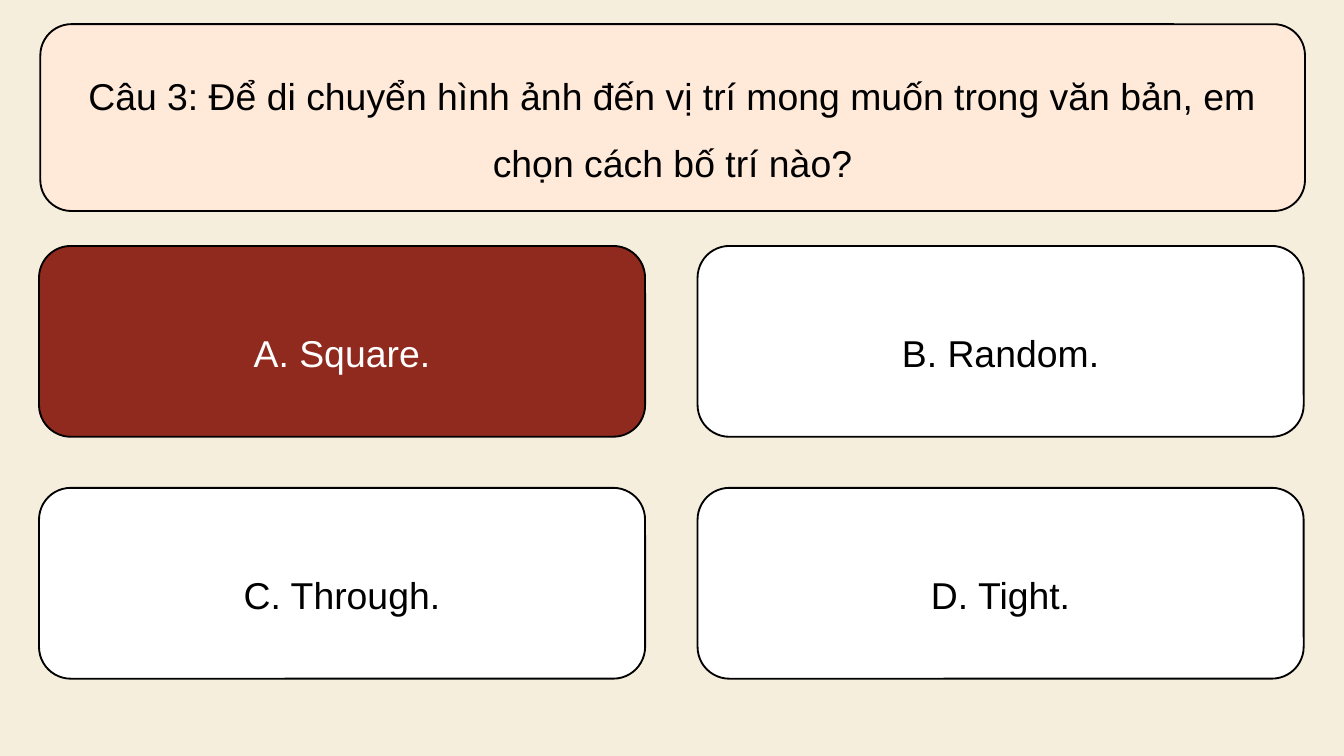
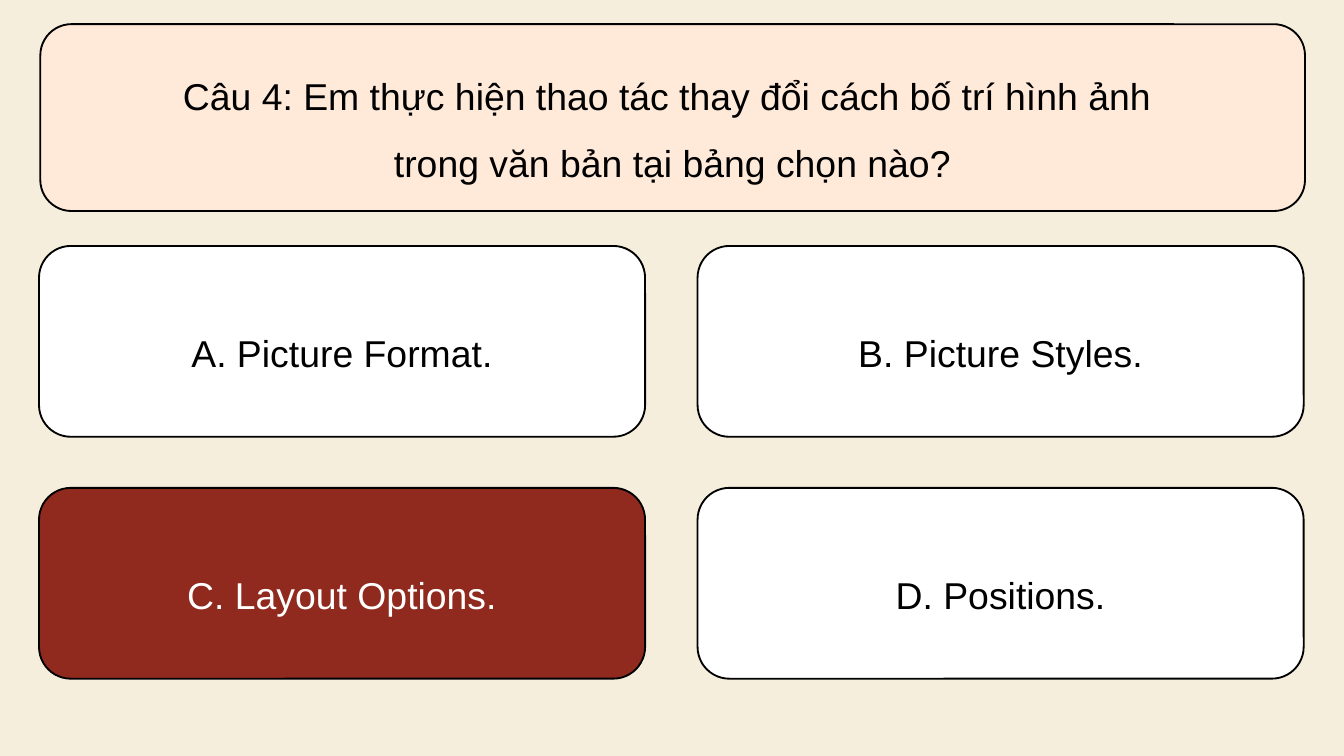
from dataclasses import dataclass

from pptx import Presentation
from pptx.dml.color import RGBColor
from pptx.enum.shapes import MSO_SHAPE
from pptx.enum.text import MSO_ANCHOR, PP_ALIGN
from pptx.presentation import Presentation as Deck
from pptx.slide import Slide
from pptx.util import Inches, Pt

COLORS = {
    "background": "F5EEDC",
    "question": "FFEADA",
    "option": "FFFFFF",
    "correct": "90291E",
    "dark": "000000",
    "light": "FFFFFF",
}
FONT = "Arial"

# Answer grid, in inches
GRID_LEFT, GRID_TOP = 0.29, 1.83
CARD_W, CARD_H = 4.51, 1.42
STEP_X, STEP_Y = 4.9, 1.8


@dataclass(frozen=True)
class Card:
    text: str
    left: float
    top: float
    width: float
    height: float
    fill: str
    color: str = "dark"


@dataclass(frozen=True)
class Quiz:
    question: str
    answers: tuple[str, ...]
    correct: int


QUIZZES = [
    Quiz(
        "Câu 3: Để di chuyển hình ảnh đến vị trí mong muốn trong văn bản, "
        "em chọn cách bố trí nào?",
        ("A. Square.", "B. Random.", "C. Through.", "D. Tight."),
        correct=0,
    ),
    Quiz(
        "Câu 4: Em thực hiện thao tác thay đổi cách bố trí hình ảnh \n"
        "trong văn bản tại bảng chọn nào?",
        ("A. Picture Format.", "B. Picture Styles.",
         "C. Layout Options.", "D. Positions."),
        correct=2,
    ),
]


def rgb(name: str) -> RGBColor:
    return RGBColor.from_string(COLORS[name])


def draw_card(s: Slide, card: Card) -> None:
    sp = s.shapes.add_shape(
        MSO_SHAPE.ROUNDED_RECTANGLE,
        Inches(card.left), Inches(card.top),
        Inches(card.width), Inches(card.height),
    )
    sp.shadow.inherit = False
    sp.fill.solid()
    sp.fill.fore_color.rgb = rgb(card.fill)
    sp.line.color.rgb = rgb("dark")
    sp.line.width = Pt(1)

    tf = sp.text_frame
    tf.text = card.text
    tf.word_wrap = True
    tf.vertical_anchor = MSO_ANCHOR.MIDDLE
    for p in tf.paragraphs:
        p.alignment = PP_ALIGN.CENTER
        p.line_spacing = 1.5
        for r in p.runs:
            r.font.name = FONT
            r.font.size = Pt(20)
            r.font.color.rgb = rgb(card.color)


def add_quiz(prs: Deck, quiz: Quiz) -> None:
    s = prs.slides.add_slide(prs.slide_layouts[6])
    s.background.fill.solid()
    s.background.fill.fore_color.rgb = rgb("background")

    # Question band
    draw_card(s, Card(quiz.question, 0.3, 0.18, 9.41, 1.39, "question"))

    # Two-by-two answers, with the correct one highlighted
    for i, answer in enumerate(quiz.answers):
        row, col = divmod(i, 2)
        fill, color = (
            ("correct", "light") if i == quiz.correct else ("option", "dark")
        )
        draw_card(s, Card(answer, GRID_LEFT + col * STEP_X,
                          GRID_TOP + row * STEP_Y,
                          CARD_W, CARD_H, fill, color))


def main() -> None:
    prs = Presentation()
    # Widescreen page, 16:9
    prs.slide_width = Inches(10)
    prs.slide_height = Inches(10 * 9 / 16)
    for quiz in QUIZZES:
        add_quiz(prs, quiz)
    prs.save("out.pptx")


if __name__ == "__main__":
    main()
